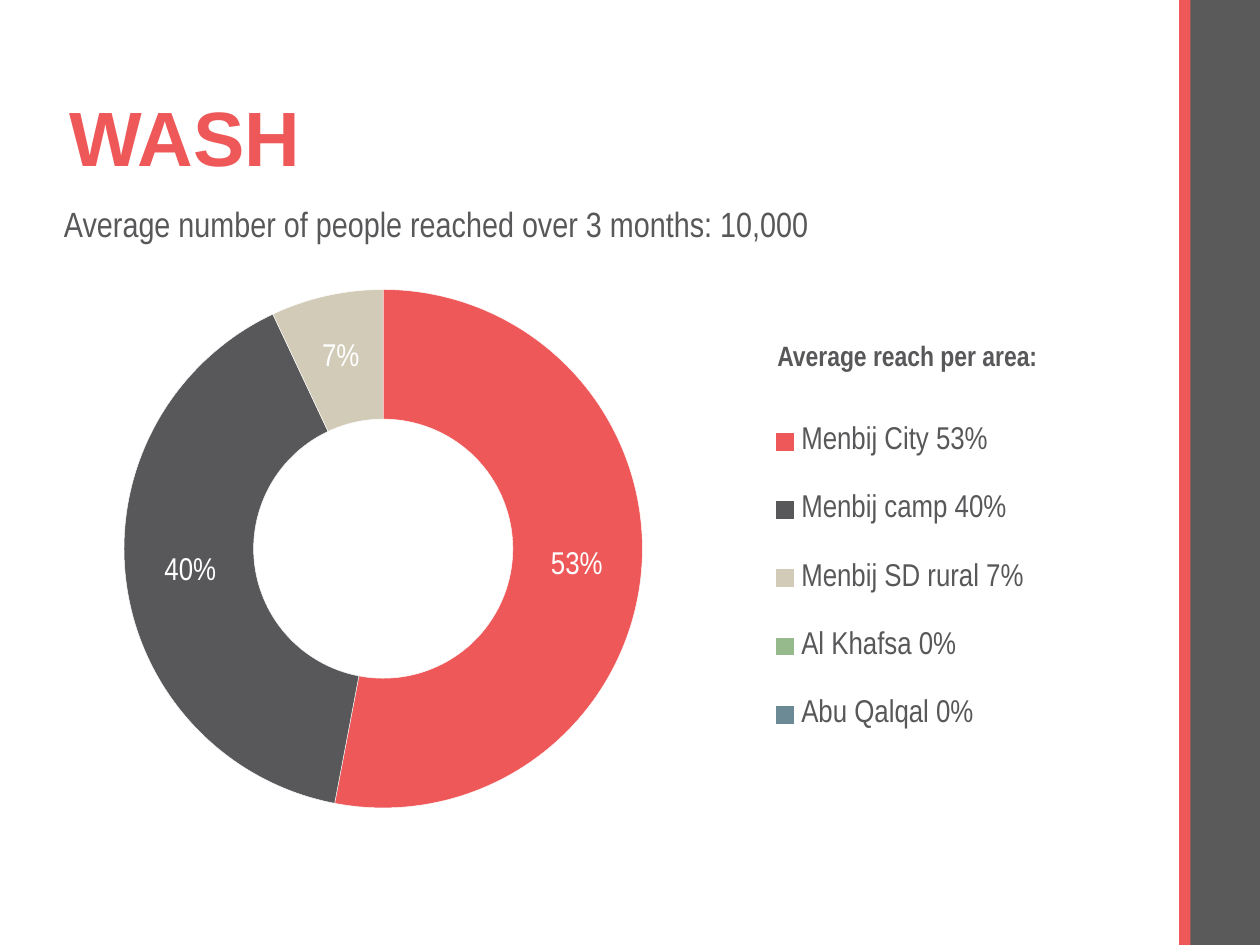
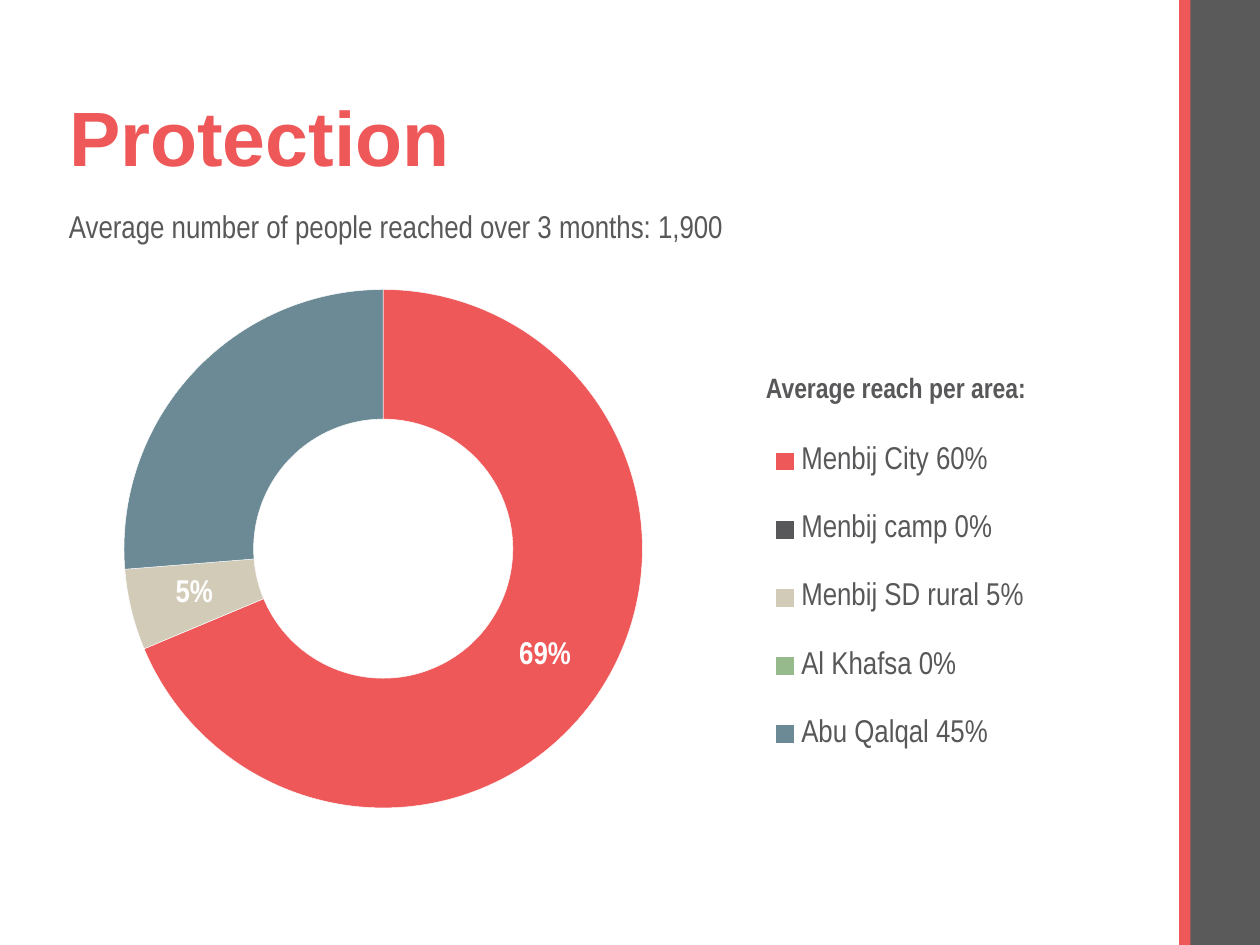
"""Build two slides showing the average reach per area as doughnut charts."""
from lxml import etree
from pptx import Presentation
from pptx.chart.data import CategoryChartData
from pptx.dml.color import RGBColor
from pptx.enum.chart import XL_CHART_TYPE, XL_LEGEND_POSITION
from pptx.enum.shapes import MSO_SHAPE
from pptx.enum.text import MSO_ANCHOR, PP_ALIGN
from pptx.oxml import parse_xml
from pptx.util import Cm, Pt

DOUGHNUT = XL_CHART_TYPE.DOUGHNUT
LEGEND_RIGHT = XL_LEGEND_POSITION.RIGHT
RECTANGLE = MSO_SHAPE.RECTANGLE
MIDDLE = MSO_ANCHOR.MIDDLE
LEFT = PP_ALIGN.LEFT

CHART_NS = "http://schemas.openxmlformats.org/drawingml/2006/chart"
RED, GREY, WHITE = "EE5859", "58585A", "FFFFFF"
AREA_COLOURS = [RED, GREY, "D2CBB8", "96BA8C", "6B8A95"]
NARROW = "Arial Narrow"
BANDS = [(23.95, 1.45, "5A5A5A"), (23.77, 0.23, RED)]
SLIDES = [
    {
        "title": "WASH",
        "reach": "Average number of people reached over 3 months: 10,000",
        "reach_box": (1.04, 3.96, 21.29, 1.12),
        "reach_size": 20,
        "heading_box": (15.42, 6.71, 5.79, 0.94),
        "areas": ["Menbij City 53%", "Menbij camp 40%", "Menbij SD rural 7%",
                  "Al Khafsa 0%", "Abu Qalqal 0%"],
        "values": [53, 40, 7, 0, 0],
        "unlabelled": [3, 4],
        "bold_labels": False,
        "legend_top": 0.18,
    },
    {
        "title": "Protection",
        "reach": "Average number of people reached over 3 months: 1,900",
        "reach_box": (1.14, 4.04, 20.4, 1.02),
        "reach_size": 18,
        "heading_box": (15.19, 7.34, 5.79, 0.94),
        "areas": ["Menbij City 60%", "Menbij camp 0%", "Menbij SD rural 5%",
                  "Al Khafsa 0%", "Abu Qalqal 45%"],
        "values": [68, 0, 5, 0, 26],
        "unlabelled": [1, 3, 4],
        "bold_labels": True,
        "legend_top": 0.21,
    },
]


def style_font(font, size, colour, bold=False, name=NARROW):
    """Set the typeface, size, weight and colour of a font."""
    font.name = name
    font.size = Pt(size)
    font.bold = bold
    font.color.rgb = RGBColor.from_string(colour)


def place_in_chart(element, index, box, inner=False):
    """Give a chart part a manual layout in fractions of the chart."""
    for layout in element.findall(f"{{{CHART_NS}}}layout"):
        element.remove(layout)
    settings = [("layoutTarget", "inner")] if inner else []
    settings += [("xMode", "edge"), ("yMode", "edge")]
    settings += zip("xywh", box)
    layout = etree.Element(f"{{{CHART_NS}}}layout")
    manual = etree.SubElement(layout, f"{{{CHART_NS}}}manualLayout")
    for tag, value in settings:
        etree.SubElement(manual, f"{{{CHART_NS}}}{tag}").set("val", str(value))
    element.insert(index, layout)


presentation = Presentation()
presentation.slide_width = Cm(25.4)
presentation.slide_height = Cm(19.05)
title_only = presentation.slide_layouts[5]

for number, content in enumerate(SLIDES):
    slide = presentation.slides.add_slide(title_only)

    if number == 0:
        for left, width, colour in BANDS:
            band = slide.shapes.add_shape(
                RECTANGLE, Cm(left), 0, Cm(width), presentation.slide_height)
            band.shadow.inherit = False
            band.fill.solid()
            band.fill.fore_color.rgb = RGBColor.from_string(colour)
            band.line.fill.background()
            title_only.shapes.element.append(band.element)

    title = slide.shapes.title
    title.left, title.top = Cm(1.14), Cm(1.02)
    title.width, title.height = Cm(21.89), Cm(3.68)
    title.text_frame.vertical_anchor = MIDDLE
    paragraph = title.text_frame.paragraphs[0]
    paragraph.alignment = LEFT
    paragraph.line_spacing = 0.9
    run = paragraph.add_run()
    run.text = content["title"]
    style_font(run.font, 44, RED, True, "Arial")

    chart_data = CategoryChartData()
    chart_data.categories = content["areas"]
    chart_data.add_series("Series 1", content["values"])
    chart = slide.shapes.add_chart(
        DOUGHNUT, Cm(1.04), Cm(5.44), Cm(21.92), Cm(13.23), chart_data).chart
    chart.has_title = False
    style_font(chart.font, 18, GREY)
    chart.has_legend = True
    chart.legend.position = LEGEND_RIGHT
    chart.legend.include_in_layout = False
    style_font(chart.legend.font, 18, GREY)

    plot = chart.plots[0]
    plot.vary_by_categories = True
    series = plot.series[0]
    for index, colour in enumerate(AREA_COLOURS):
        slice_format = series.points[index].format
        slice_format.fill.solid()
        slice_format.fill.fore_color.rgb = RGBColor.from_string(colour)
        slice_format.line.color.rgb = RGBColor.from_string(WHITE)
        slice_format.line.width = Pt(0.25)

    labels = series.data_labels
    labels.show_value = False
    labels.show_percentage = True
    labels.number_format = "0%"
    labels.number_format_is_linked = False
    style_font(labels.font, 18, WHITE, content["bold_labels"])

    chart_space = chart.element
    series_labels = chart_space.xpath(".//c:ser/c:dLbls")[0]
    for position, index in enumerate(content["unlabelled"]):
        series_labels.insert(position, parse_xml(
            f'<c:dLbl xmlns:c="{CHART_NS}"><c:idx val="{index}"/>'
            '<c:delete val="1"/></c:dLbl>'))
    chart_space.xpath(".//c:holeSize")[0].set("val", "65")
    place_in_chart(chart_space.xpath(".//c:plotArea")[0], 0,
                   (0.04, 0.03, 0.53, 0.79), inner=True)
    place_in_chart(chart_space.xpath(".//c:legend")[0], 1,
                   (0.66, content["legend_top"], 0.24, 0.58))

    for text, box, size, bold, wrap in [
        (content["reach"], content["reach_box"], content["reach_size"], False, True),
        ("Average reach per area:", content["heading_box"], 16, True, False),
    ]:
        text_box = slide.shapes.add_textbox(*[Cm(length) for length in box])
        text_box.text_frame.word_wrap = wrap
        run = text_box.text_frame.paragraphs[0].add_run()
        run.text = text
        style_font(run.font, size, GREY, bold)

presentation.save("out.pptx")
